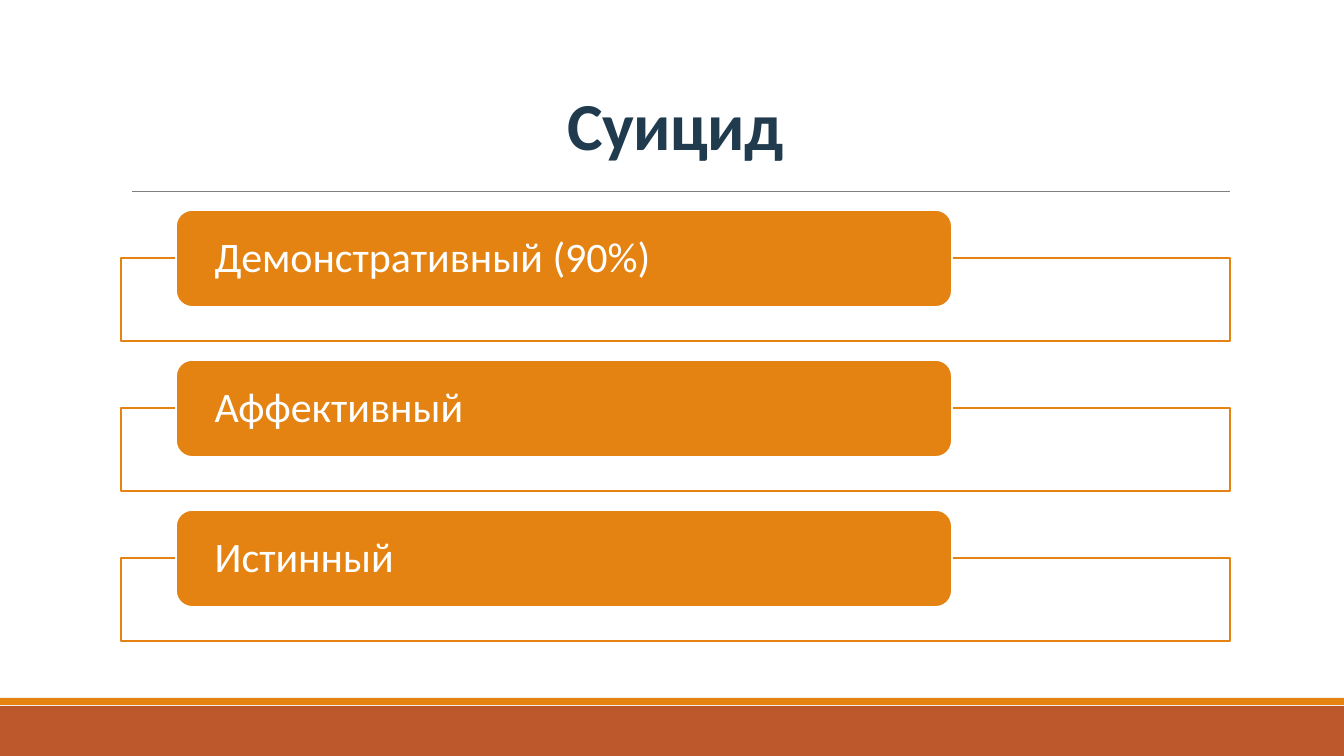
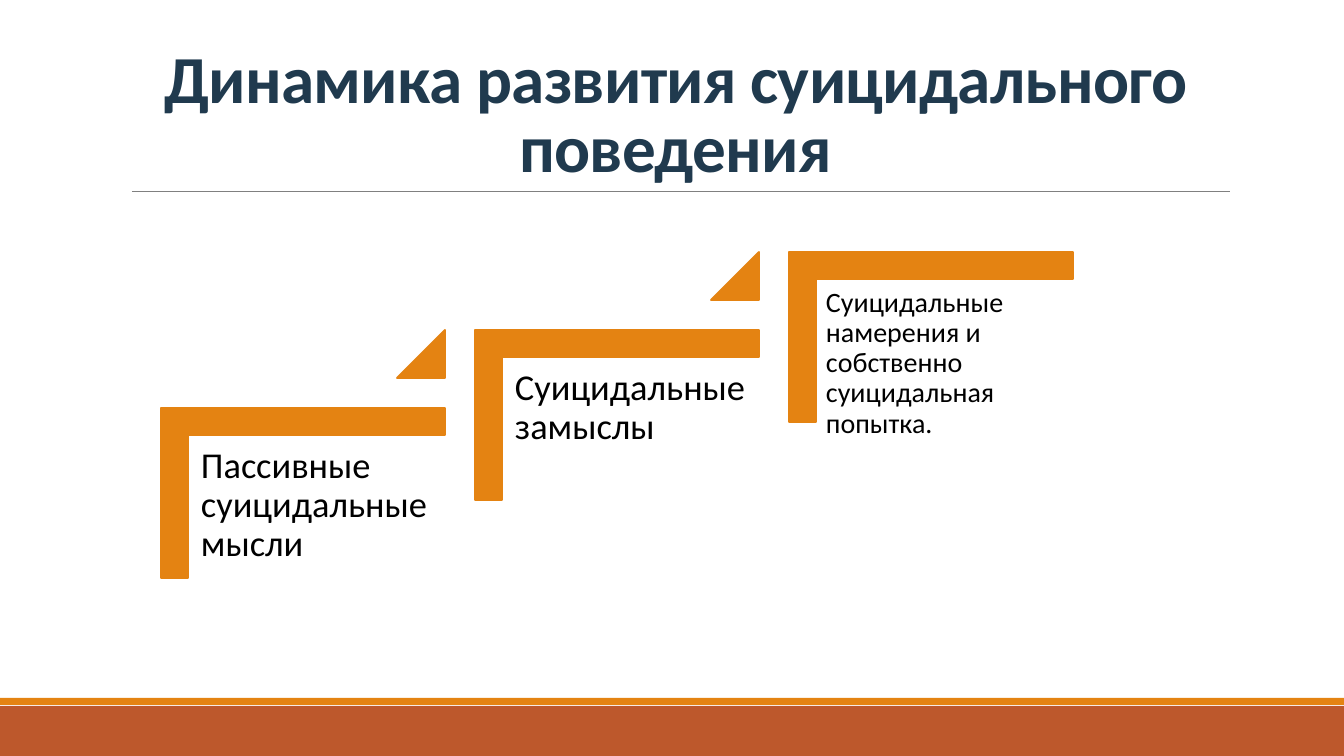
from dataclasses import dataclass

from lxml import etree
from pptx import Presentation
from pptx import util as u
from pptx.dml import color as c
from pptx.enum import shapes, text
from pptx.oxml import ns

SCALE = 914400 / 100.8


@dataclass(frozen=True)
class Theme:
    font: str = "Calibri"
    rust: str = "BD582C"
    amber: str = "E48312"
    gray: str = "808080"
    navy: str = "203A4E"
    white: str = "FFFFFF"
    black: str = "000000"
    head: int = 48
    label: int = 30
    step: int = 26
    small: int = 20
    edge: float = 1.25
    hair: float = 0.5


THEME = Theme()
KIND = shapes.MSO_SHAPE


def px(n):
    return u.Emu(round(n * SCALE))


def rgb(tone):
    return c.RGBColor.from_string(tone)


def add_form(slide, kind, box, fill, edge=None):
    form = slide.shapes.add_shape(kind, *map(px, box))
    form.shadow.inherit = False
    form.fill.solid()
    form.fill.fore_color.rgb = rgb(fill)
    if edge:
        form.line.color.rgb = rgb(edge)
        form.line.width = u.Pt(THEME.edge)
    else:
        form.line.fill.background()
    return form


def set_text(frame, words, size, tone, space, align, anchor, bold=False):
    frame.word_wrap = True
    frame.auto_size = text.MSO_AUTO_SIZE.NONE
    frame.vertical_anchor = anchor
    frame.text = words
    para = frame.paragraphs[0]
    para.alignment = align
    para.line_spacing = space
    para.font.name = THEME.font
    para.font.size = u.Pt(size)
    para.font.bold = bold
    para.font.color.rgb = rgb(tone)


def set_pad(frame, side, top):
    frame.margin_left = frame.margin_right = px(side)
    frame.margin_top = frame.margin_bottom = px(top)


def add_frame(layout, slide):
    rule = slide.shapes.add_connector(
        shapes.MSO_CONNECTOR.STRAIGHT, px(132), px(191), px(1230), px(191))
    rule.line.color.rgb = rgb(THEME.gray)
    rule.line.width = u.Pt(THEME.hair)
    etree.SubElement(rule.element.spPr, ns.qn("a:effectLst"))
    parts = [
        add_form(slide, KIND.RECTANGLE, (0, 706, 1344, 50), THEME.rust),
        add_form(slide, KIND.RECTANGLE, (0, 698, 1344, 7), THEME.amber),
        rule,
    ]
    for num, part in enumerate(parts, 20):
        part.element.xpath(".//p:cNvPr")[0].set("id", str(num))
        layout.shapes.element.append(part.element)


def add_title(slide, words, top):
    title = slide.shapes.title
    title.left, title.top, title.width, title.height = map(
        px, (121, top, 1109, 160))
    set_text(title.text_frame, words, THEME.head, THEME.navy, 0.85,
             text.PP_ALIGN.CENTER, text.MSO_ANCHOR.BOTTOM, True)
    title.element.xpath(".//a:defRPr")[0].set("spc", "-50")


def add_list(slide, box, items):
    left, top, width, height = box
    pitch = height // len(items)
    for row, words in enumerate(items):
        y = top + row * pitch
        add_form(slide, KIND.RECTANGLE, (left, y + 48, width, 83),
                 THEME.white, THEME.amber)
        pill = add_form(slide, KIND.ROUNDED_RECTANGLE,
                        (left + 55, y, width * 7 // 10, 97),
                        THEME.amber, THEME.white)
        set_pad(pill.text_frame, 34, 0)
        set_text(pill.text_frame, words, THEME.label, THEME.white, 0.9,
                 text.PP_ALIGN.LEFT, text.MSO_ANCHOR.MIDDLE)


def add_step(slide, box, words, size, pad):
    left, top, width, height = box
    turn = (width - height) // 2
    angle = add_form(slide, KIND.CORNER,
                     (left + turn, top - turn, height, width),
                     THEME.amber, THEME.amber)
    angle.rotation = 90
    angle.adjustments[0] = angle.adjustments[1] = 0.16
    note = slide.shapes.add_textbox(
        *map(px, (left + 29, top + 28, width - 27, 225)))
    set_pad(note.text_frame, pad, pad)
    set_text(note.text_frame, words, size, THEME.black, 0.9,
             text.PP_ALIGN.LEFT, text.MSO_ANCHOR.TOP)


def add_stairs(slide, box, items):
    left, low, width, height = box
    run, rise = 314, 78
    for num, (words, size, pad) in enumerate(items):
        x, y = left + num * run, low - num * rise
        add_step(slide, (x, y, width, height), words, size, pad)
        if num < len(items) - 1:
            mark = add_form(slide, KIND.ISOSCELES_TRIANGLE,
                            (x + width - 48, y - rise, 48, 48),
                            THEME.amber, THEME.amber)
            mark.adjustments[0] = 1


def main():
    deck = Presentation()
    deck.slide_width, deck.slide_height = px(1344), px(756)
    layout = deck.slide_layouts[5]

    kinds = deck.slides.add_slide(layout)
    add_frame(layout, kinds)
    add_title(kinds, "Суицид", 9)
    add_list(kinds, (121, 210, 1109, 450),
             ["Демонстративный (90%)", "Аффективный", "Истинный"])

    path = deck.slides.add_slide(layout)
    add_title(path, "Динамика развития суицидального поведения", 31)
    add_stairs(path, (161, 408, 284, 170), [
        ("Пассивные суицидальные мысли", THEME.step, 11),
        ("Суицидальные замыслы", THEME.step, 11),
        ("Суицидальные намерения и собственно суицидальная попытка.",
         THEME.small, 8),
    ])
    deck.save("out.pptx")


if __name__ == "__main__":
    main()
